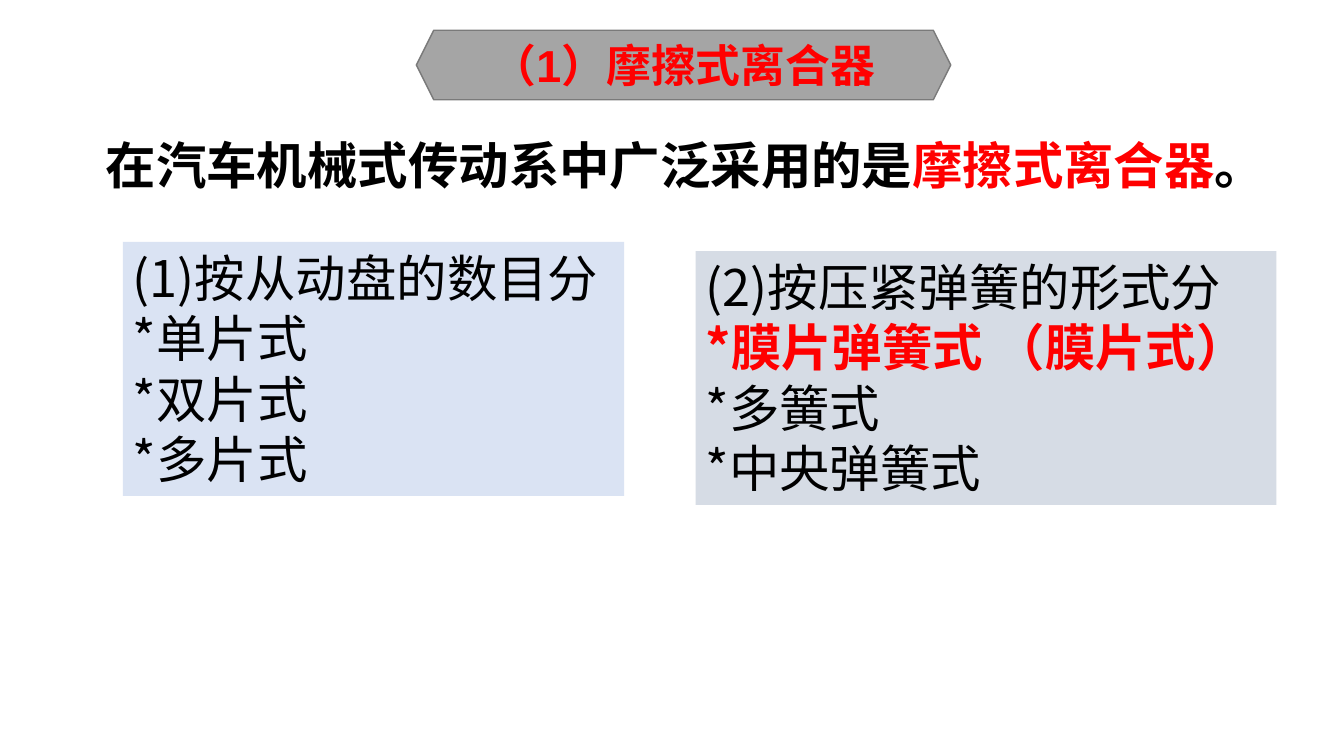
from pptx import Presentation
from pptx.dml.color import RGBColor
from pptx.enum.shapes import MSO_SHAPE as Shape
from pptx.enum.text import MSO_ANCHOR as Anchor, MSO_AUTO_SIZE as AutoSize, PP_ALIGN as Align
from pptx.oxml.ns import qn
from pptx.util import Inches, Pt

BLACK, RED = "000000", "FF0000"
LATIN, CHINESE = "Arial", "Noto Sans CJK SC"


def color(value):
    return RGBColor.from_string(value)


class ClutchSlide:
    """Holds the text style and the current slide, and adds its elements."""

    def __init__(self, deck):
        self.page = deck.slides.add_slide(deck.slide_layouts[5])
        self.size = 36

    def span(self, para, text, font=LATIN, shade=BLACK, bold=False, size=None):
        run = para.add_run()
        run.text = text
        run.font.name = font
        run.font.size = Pt(size or self.size)
        run.font.bold = bold
        run.font.color.rgb = color(shade)
        east_asian = run.font._element.makeelement(qn("a:ea"), {"typeface": CHINESE})
        run.font._element.find(qn("a:latin")).addnext(east_asian)

    def shape(self, kind, area, fill, line=None):
        shape = self.page.shapes.add_shape(kind, *map(Inches, area))
        shape.shadow.inherit = False
        shape.fill.solid()
        shape.fill.fore_color.rgb = color(fill)
        if line:
            shape.line.color.rgb = color(line)
            shape.line.width = Pt(1)
        else:
            shape.line.fill.background()
        return shape

    def title(self, text, area):
        banner = self.shape(Shape.HEXAGON, area, "A5A5A5", "7A7A7A")
        title = self.page.shapes.title
        banner._element.addnext(title._element)
        title.left, title.top, title.width, title.height = map(Inches, area)
        frame = title.text_frame
        frame.auto_size = AutoSize.NONE
        frame.vertical_anchor = Anchor.MIDDLE
        para = frame.paragraphs[0]
        para.alignment = Align.CENTER
        self.span(para, text, shade=RED, bold=True, size=32)

    def statement(self, parts, area):
        box = self.page.shapes.add_textbox(*map(Inches, area))
        box.text_frame.word_wrap = True
        para = box.text_frame.paragraphs[0]
        para.line_spacing = 0.9
        properties = para._p.get_or_add_pPr()
        properties.set("marL", str(Inches(0.25)))
        properties.set("indent", str(Inches(-0.11)))
        for text, shade in parts:
            self.span(para, text, shade=shade, bold=True)

    def panel(self, lines, area, fill, key=None):
        frame = self.shape(Shape.RECTANGLE, area, fill).text_frame
        frame.word_wrap = True
        frame.auto_size = AutoSize.SHAPE_TO_FIT_TEXT
        frame.vertical_anchor = Anchor.TOP
        for index, text in enumerate(lines):
            para = frame.add_paragraph() if index else frame.paragraphs[0]
            para.alignment = Align.LEFT
            marked = text == key
            self.span(para, text, CHINESE, RED if marked else BLACK, marked)


def main():
    deck = Presentation()
    deck.slide_width, deck.slide_height = Inches(13.33), Inches(7.5)
    slide = ClutchSlide(deck)
    slide.title("（1）摩擦式离合器", (4.13, 0.3, 5.3, 0.69))
    slide.panel(["(1)按从动盘的数目分", "*单片式", "*双片式", "*多片式"],
                (1.22, 2.4, 4.97, 2.52), "DAE3F3")
    diaphragm = "*膜片弹簧式 （膜片式）"
    slide.panel(["(2)按压紧弹簧的形式分", diaphragm, "*多簧式", "*中央弹簧式"],
                (6.9, 2.49, 5.76, 2.52), "D6DCE5", diaphragm)
    slide.statement([("在汽车机械式传动系中广泛采用的是", BLACK),
                     ("摩擦式离合器", RED), ("。", BLACK)],
                    (0.81, 1.35, 11.72, 0.59))
    deck.save("out.pptx")


if __name__ == "__main__":
    main()
